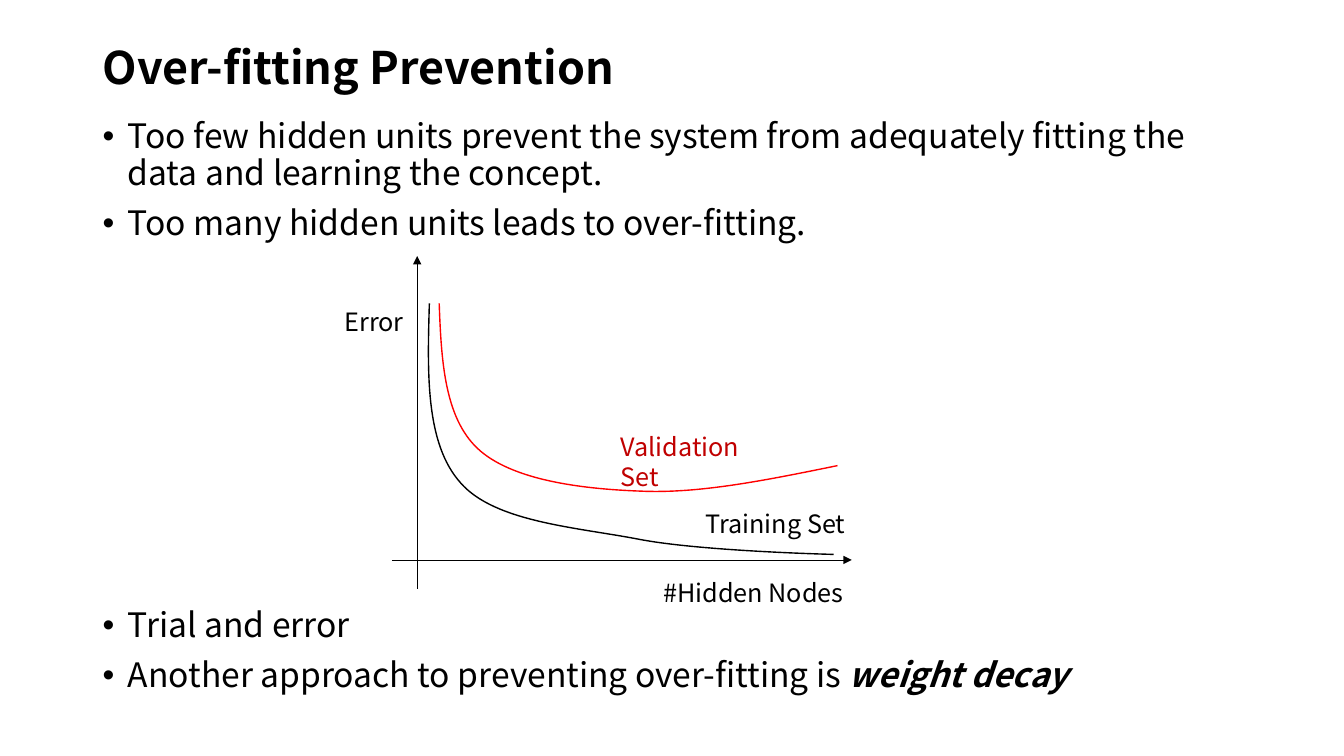
from dataclasses import dataclass

from lxml import etree
from pptx import Presentation
from pptx import util as u
from pptx.dml import color
from pptx.enum import shapes, text
from pptx.oxml import ns


@dataclass(frozen=True)
class Theme:
    font: str = "Noto Sans CJK KR"
    ink: str = "000000"
    curve: str = "FF0000"
    accent: str = "C00000"
    title: float = 32
    body: float = 24
    label: float = 18


@dataclass(frozen=True)
class Box:
    left: float
    top: float
    width: float
    height: float


@dataclass(frozen=True)
class Label:
    words: str
    box: Box
    ink: str


@dataclass(frozen=True)
class Axis:
    start: tuple[float, float]
    end: tuple[float, float]


@dataclass(frozen=True)
class Curve:
    knots: list[tuple[float, float]]
    ink: str


@dataclass(frozen=True)
class Bullet:
    words: str
    emphasis: str = ""
    gap: float = 10


THEME = Theme()

TITLE = Label("Over-fitting Prevention", Box(66.2, 28.8, 828, 42.5), THEME.ink)

BODY = Box(66.2, 82, 828, 337)
BULLETS = [
    Bullet("Too few hidden units prevent the system from adequately fitting "
           "the data and learning the concept."),
    Bullet("Too many hidden units leads to over-fitting."),
    Bullet("Trial and error", gap=261.4),
    Bullet("Another approach to preventing over-fitting is ", "weight decay"),
]

AXES = [
    Axis((280, 400), (608.4, 400)),
    Axis((298, 420.5), (298, 182.9)),
]

CURVES = [
    Curve([(306.7, 216.7), (305.3, 266.4), (303.8, 316.8), (329, 344.9),
           (353.5, 373), (411.8, 376.6), (456.5, 385.2),
           (501.1, 393.8), (595.4, 396), (595.4, 396)], THEME.ink),
    Curve([(313.7, 216.7), (315.2, 257), (317.4, 298.1), (341.2, 320.4),
           (365, 342.7), (414, 349.2), (457.2, 350.8),
           (499.7, 352.8), (548.6, 342.7), (598.2, 332.6)], THEME.curve),
]

LABELS = [
    Label("Error", Box(239, 215.3, 62.6, 28.8), THEME.ink),
    Label("#Hidden Nodes", Box(466.6, 409, 157.7, 28.8), THEME.ink),
    Label("Training Set", Box(497, 359.3, 127.4, 28.8), THEME.ink),
    Label("Validation Set", Box(436.3, 304.6, 127.4, 28.8), THEME.accent),
]


def style_run(r, size: float, ink: str, bold: bool = False, italic: bool = False) -> None:
    r.font.name = THEME.font
    r.font.size = u.Pt(size)
    r.font.bold = bold
    r.font.italic = italic
    r.font.color.rgb = color.RGBColor.from_string(ink)


def style_line(line, ink: str, width: float) -> None:
    line.color.rgb = color.RGBColor.from_string(ink)
    line.width = u.Pt(width)


def add_text_frame(s, box: Box):
    sp = s.shapes.add_textbox(u.Pt(box.left), u.Pt(box.top), u.Pt(box.width), u.Pt(box.height))
    tf = sp.text_frame
    tf.word_wrap = True
    return tf


def add_label(s, label: Label, size: float, bold: bool = False):
    tf = add_text_frame(s, label.box)
    tf.text = label.words
    style_run(tf.paragraphs[0].runs[0], size, label.ink, bold)
    return tf


def add_title(s, label: Label) -> None:
    tf = add_label(s, label, THEME.title, bold=True)
    tf.vertical_anchor = text.MSO_ANCHOR.MIDDLE
    tf.paragraphs[0].line_spacing = 0.9


def add_bullets(s, box: Box, bullets: list[Bullet]) -> None:
    tf = add_text_frame(s, box)
    for i, bullet in enumerate(bullets):
        p = tf.add_paragraph() if i else tf.paragraphs[0]
        p.text = bullet.words
        style_run(p.runs[0], THEME.body, THEME.ink)
        if bullet.emphasis:
            r = p.add_run()
            r.text = bullet.emphasis
            style_run(r, THEME.body, THEME.ink, bold=True, italic=True)
        p.line_spacing = 0.9
        p.space_before = u.Pt(bullet.gap)
        ppr = p._p.get_or_add_pPr()
        ppr.set("marL", str(u.Pt(18)))
        ppr.set("indent", str(-u.Pt(18)))
        etree.SubElement(ppr, ns.qn("a:buFont"), typeface="Arial")
        etree.SubElement(ppr, ns.qn("a:buChar"), char="•")


def add_axis(s, axis: Axis) -> None:
    ends = [u.Pt(v) for v in (*axis.start, *axis.end)]
    sp = s.shapes.add_connector(shapes.MSO_CONNECTOR.STRAIGHT, *ends)
    style_line(sp.line, THEME.ink, 0.5)
    etree.SubElement(sp.line._get_or_add_ln(), ns.qn("a:tailEnd"), type="triangle")
    etree.SubElement(sp._element.spPr, ns.qn("a:effectLst"))


def bend_segments(sp) -> None:
    lines = list(sp._element.iter(ns.qn("a:lnTo")))
    for i in range(0, len(lines), 3):
        bend = etree.Element(ns.qn("a:cubicBezTo"))
        lines[i].addprevious(bend)
        for line in lines[i:i + 3]:
            bend.append(line[0])
            line.getparent().remove(line)


def add_curve(s, curve: Curve) -> None:
    start, *rest = [(u.Pt(x), u.Pt(y)) for x, y in curve.knots]
    builder = s.shapes.build_freeform(*start)
    builder.add_line_segments(rest, close=False)
    sp = builder.convert_to_shape()
    bend_segments(sp)
    sp.shadow.inherit = False
    sp.fill.background()
    style_line(sp.line, curve.ink, 1)


def main() -> None:
    prs = Presentation()
    prs.slide_width, prs.slide_height = u.Pt(960), u.Pt(540)
    s = prs.slides.add_slide(prs.slide_layouts[6])
    add_title(s, TITLE)
    add_bullets(s, BODY, BULLETS)
    for axis in AXES:
        add_axis(s, axis)
    for curve in CURVES:
        add_curve(s, curve)
    for label in LABELS:
        add_label(s, label, THEME.label)
    prs.save("out.pptx")


if __name__ == "__main__":
    main()
